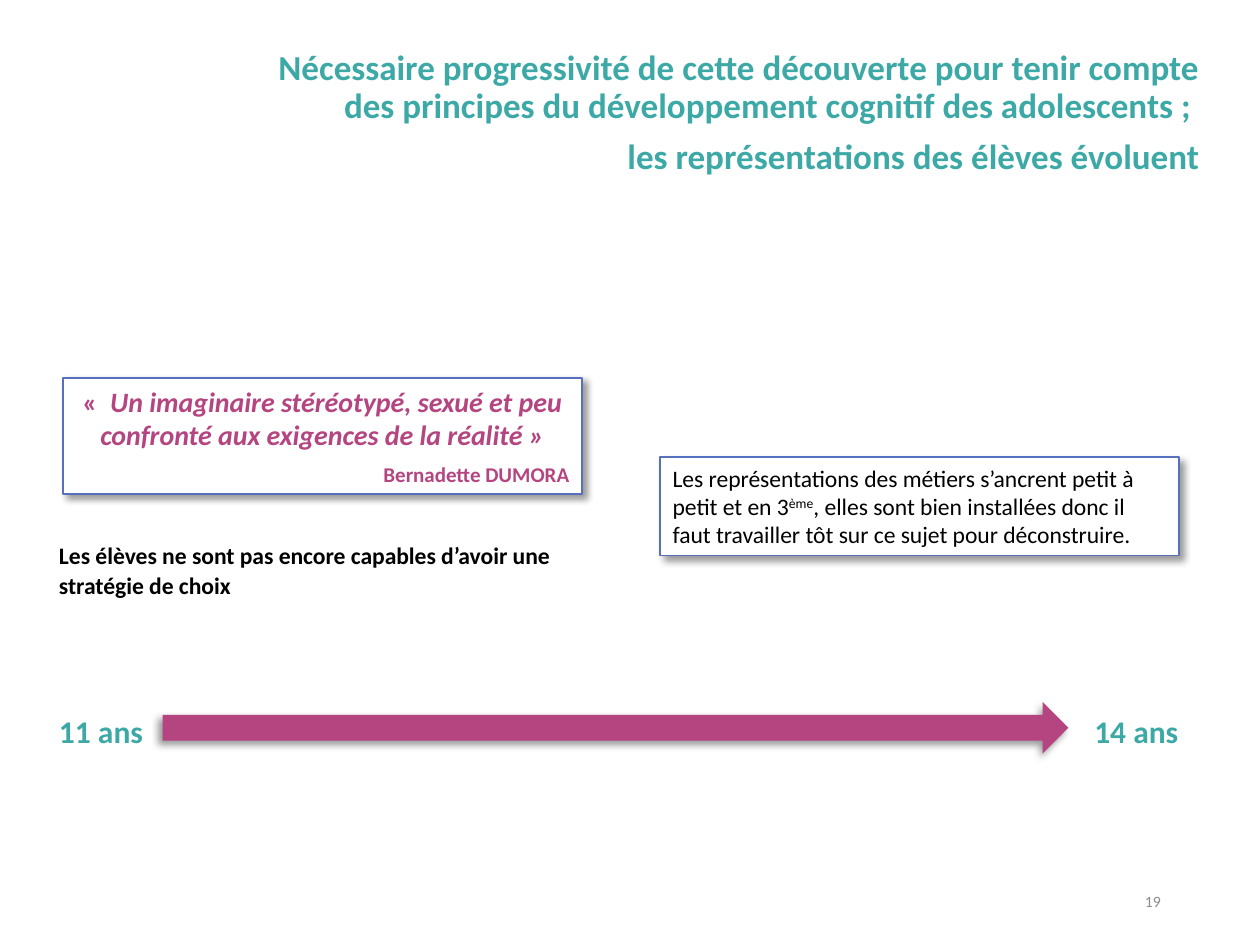
from dataclasses import dataclass
from typing import NamedTuple

from lxml.etree import SubElement
from pptx import Presentation
from pptx.dml.color import RGBColor as Rgb
from pptx.enum.shapes import MSO_SHAPE as Shape
from pptx.enum.text import MSO_ANCHOR as Anchor, MSO_AUTO_SIZE as Fit, PP_ALIGN as Align
from pptx.oxml.ns import qn
from pptx.util import Cm, Pt


@dataclass(frozen=True)
class Theme:
    """Colours, font and type sizes of the slide."""
    font: str = "Calibri"
    teal: str = "3DA9A6"
    plum: str = "B54580"
    blue: str = "5770BE"
    grey: str = "8C8C8C"
    black: str = "000000"
    white: str = "FFFFFF"
    title: float = 20
    age: float = 18
    quote: float = 16
    body: float = 13.5
    author: float = 12
    page: float = 9


class Box(NamedTuple):
    """A region in centimetres."""
    left: float
    top: float
    width: float
    height: float

    def lengths(self):
        """Return the region as Cm lengths."""
        return [Cm(value) for value in self]


THEME = Theme()


def apply(target, values):
    """Set each named attribute on the target."""
    for name, value in values.items():
        setattr(target, name, value)


def add_para(frame, spans, size, colour, bold=False, **layout):
    """Write one paragraph of (text, format values) spans into a frame."""
    para = frame.paragraphs[0]
    if para.runs:
        para = frame.add_paragraph()
    apply(para, layout)
    for text, values in spans:
        span = para.add_run()
        span.text = text
        apply(span.font, {"name": THEME.font, "size": Pt(size), "bold": bold, **values})
        span.font.color.rgb = Rgb.from_string(colour)
    return para


def add_text(page, box, **frame_values):
    """Add a text box and return its frame."""
    frame = page.shapes.add_textbox(*box.lengths()).text_frame
    apply(frame, {"word_wrap": True, **frame_values})
    return frame


def add_shadow(shape, degrees):
    """Give a shape a soft offset shadow."""
    shape.shadow.inherit = False
    effects = shape._element.spPr.find(qn("a:effectLst"))
    shadow = SubElement(effects, qn("a:outerShdw"), blurRad=str(Pt(4)), dist=str(Pt(3)),
                        dir=str(degrees * 60000), algn="tl", rotWithShape="0")
    colour = SubElement(shadow, qn("a:srgbClr"), val=THEME.black)
    SubElement(colour, qn("a:alpha"), val="40000")


def add_card(page, box):
    """Add a white framed card with a shadow and return its text frame."""
    card = page.shapes.add_shape(Shape.RECTANGLE, *box.lengths())
    card.fill.solid()
    card.fill.fore_color.rgb = Rgb.from_string(THEME.white)
    card.line.color.rgb = Rgb.from_string(THEME.blue)
    card.line.width = Pt(1)
    add_shadow(card, 45)
    apply(card.text_frame, {"word_wrap": True, "vertical_anchor": Anchor.TOP,
                            "auto_size": Fit.SHAPE_TO_FIT_TEXT})
    return card.text_frame


def add_heading(page, box):
    """Fill and place the title placeholder."""
    title = page.shapes.title
    apply(title, dict(zip(("left", "top", "width", "height"), box.lengths())))
    frame = title.text_frame
    apply(frame, {"word_wrap": True, "vertical_anchor": Anchor.TOP, "auto_size": Fit.NONE})
    lines = ("Nécessaire progressivité de cette découverte pour tenir compte des principes "
             "du développement cognitif des adolescents ; ",
             "les représentations des élèves évoluent")
    for line, gap in zip(lines, (0, 7.5)):
        add_para(frame, [(line, {})], THEME.title, THEME.teal, True,
                 alignment=Align.RIGHT, line_spacing=0.9, space_before=Pt(gap))


def add_quote(page, box):
    """Add the quotation card with its author."""
    frame = add_card(page, box)
    quote = ("Un imaginaire stéréotypé, sexué et peu confronté aux exigences "
             "de la réalité »")
    add_para(frame, [("«  ", {}), (quote, {"italic": True})], THEME.quote, THEME.plum, True,
             alignment=Align.CENTER, space_after=Pt(6))
    add_para(frame, [("Bernadette DUMORA", {})], THEME.author, THEME.plum, True,
             alignment=Align.RIGHT)


def add_finding(page, box):
    """Add the card on how representations settle."""
    spans = [("Les représentations des métiers s’ancrent petit à petit et en 3", {}),
             ("ème", {}),
             (", elles sont bien installées donc il faut travailler tôt sur ce sujet "
              "pour déconstruire.", {})]
    para = add_para(add_card(page, box), spans, THEME.body, THEME.black, alignment=Align.LEFT)
    para.runs[1]._r.get_or_add_rPr().set("baseline", "30000")


def add_remark(page, box):
    """Add the bold remark under the quotation."""
    text = "Les élèves ne sont pas encore capables d’avoir une stratégie de choix"
    add_para(add_text(page, box, auto_size=Fit.SHAPE_TO_FIT_TEXT), [(text, {})],
             THEME.body, THEME.black, True, line_spacing=1.07, space_after=Pt(6))


def add_timeline(page, box):
    """Add the age arrow with a label at each end."""
    label_width, label_drop, arrow_inset, arrow_length = 2.24, 0.07, 2.34, 18.26
    middle_x = box.left + arrow_inset + arrow_length / 2
    middle_y = box.top + box.height / 2
    upright = Box(middle_x - box.height / 2, middle_y - arrow_length / 2,
                  box.height, arrow_length)
    arrow = page.shapes.add_shape(Shape.DOWN_ARROW, *upright.lengths())
    arrow.rotation = 270
    arrow.fill.solid()
    arrow.fill.fore_color.rgb = Rgb.from_string(THEME.plum)
    arrow.line.fill.background()
    add_shadow(arrow, 135)
    for text, offset in (("11 ans", 0), ("14 ans", box.width - label_width)):
        label = Box(box.left + offset, box.top + label_drop, label_width, box.height)
        frame = add_text(page, label, word_wrap=False, auto_size=Fit.SHAPE_TO_FIT_TEXT)
        add_para(frame, [(text, {})], THEME.age, THEME.teal, True)


def add_page_number(page, box):
    """Add the page number."""
    frame = add_text(page, box, vertical_anchor=Anchor.MIDDLE)
    add_para(frame, [("19", {})], THEME.page, THEME.grey, alignment=Align.RIGHT)


def main():
    """Build and save the deck."""
    deck = Presentation()
    apply(deck, {"slide_width": Cm(25.4), "slide_height": Cm(19.05)})
    page = deck.slides.add_slide(deck.slide_layouts[5])
    add_page_number(page, Box(17.93, 17.65, 5.72, 1.02))
    add_quote(page, Box(1.27, 7.62, 10.46, 2.34))
    add_timeline(page, Box(0.94, 14.15, 23.11, 1.04))
    add_heading(page, Box(4.95, 0.89, 19.48, 3.23))
    add_finding(page, Box(13.31, 9.22, 10.46, 1.98))
    add_remark(page, Box(0.94, 10.74, 10.8, 1.5))
    deck.save("out.pptx")


if __name__ == "__main__":
    main()
